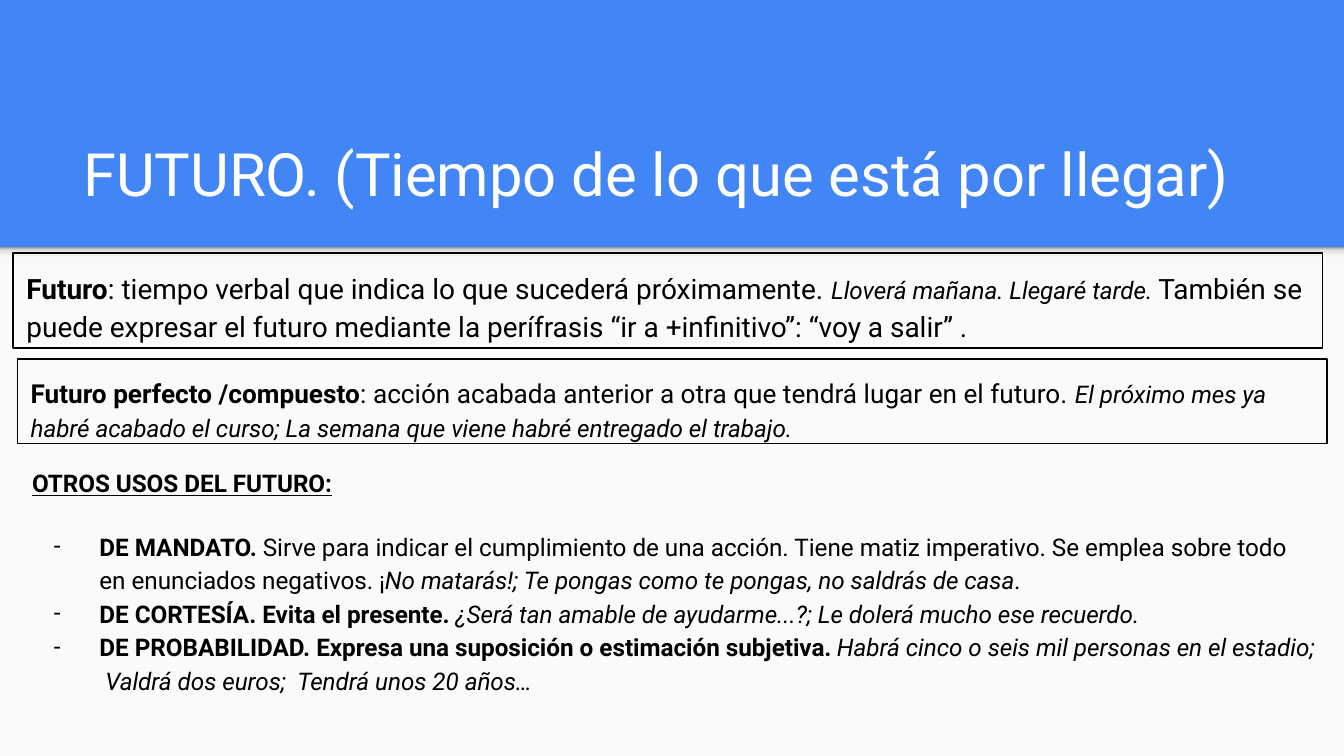
from lxml import etree
from pptx import Presentation
from pptx.dml.color import RGBColor
from pptx.enum.shapes import MSO_SHAPE
from pptx.enum.text import MSO_ANCHOR, MSO_AUTO_SIZE, PP_ALIGN
from pptx.oxml.ns import qn
from pptx.util import Cm, Pt

RECTANGLE = MSO_SHAPE.RECTANGLE
TOP, BOTTOM = MSO_ANCHOR.TOP, MSO_ANCHOR.BOTTOM
LEFT = PP_ALIGN.LEFT
NO_AUTOFIT = MSO_AUTO_SIZE.NONE

FONT = "Roboto"
BLUE, PAPER, BLACK, WHITE = "4285F4", "FAFAFA", "000000", "FFFFFF"
WIDTH, HEIGHT, BAND = 25.4, 14.29, 4.67
INSET = 0.25
SHADOW_STOPS = [(0, "F9F9F9"), (36, "F9F9F9"), (80, "DEDEDE"), (100, "999999")]

TITLE = [("FUTURO. (Tiempo de lo que está por llegar)", 32, "")]
FUTURE = [
    ("Futuro", 15, "b"),
    (": tiempo verbal que indica lo que sucederá próximamente. ", 15, ""),
    ("Lloverá mañana. Llegaré tarde. ", 13, "i"),
    ("También se puede expresar el futuro mediante la perífrasis "
     "“ir a +infinitivo”: “voy a salir” .", 15, ""),
]
PERFECT = [
    ("Futuro perfecto /compuesto", 14, "b"),
    (": acción acabada anterior a otra que tendrá lugar en el futuro. ", 14, ""),
    ("El próximo mes ya habré acabado el curso; "
     "La semana que viene habré entregado el trabajo.", 13, "i"),
]
USES_HEADING = [("OTROS USOS DEL FUTURO:", 13, "bu")]
USES = [
    [("DE MANDATO. ", 13, "b"),
     ("Sirve para indicar el cumplimiento de una acción. Tiene matiz imperativo. "
      "Se emplea sobre todo en enunciados negativos. ¡", 13, ""),
     ("No matarás!; Te pongas como te pongas, no saldrás de casa", 13, "i"),
     (".", 13, "")],
    [("DE CORTESÍA. Evita el presente. ", 13, "b"),
     ("¿Será tan amable de ayudarme...?; Le dolerá mucho ese recuerdo.", 13, "i")],
    [("DE PROBABILIDAD. Expresa una suposición o estimación subjetiva. ", 13, "b"),
     ("Habrá cinco o seis mil personas en el estadio;  Valdrá dos euros;  "
      "Tendrá unos 20 años…", 13, "i")],
]
DEFINITIONS = [
    (FUTURE, (0.25, 4.78, 24.75, 1.8)),
    (PERFECT, (0.33, 6.79, 24.75, 1.6)),
]


def color(value):
    """Turn a hex string into a colour."""
    return RGBColor.from_string(value)


def add_rectangle(slide, box):
    """Add a plain rectangle without shadow or line."""
    shape = slide.shapes.add_shape(RECTANGLE, *map(Cm, box))
    shape.shadow.inherit = False
    shape.line.fill.background()
    return shape


def fill_gradient(shape, stops):
    """Fill a shape with a gradient that runs from bottom to top."""
    shape.fill.gradient()
    shape.fill.gradient_angle = 90
    stop_list = shape._element.spPr.find(qn("a:gradFill")).find(qn("a:gsLst"))
    for stop in list(stop_list):
        stop_list.remove(stop)
    for position, value in stops:
        stop = etree.SubElement(stop_list, qn("a:gs"), pos=str(position * 1000))
        etree.SubElement(stop, qn("a:srgbClr"), val=value)


def prepare_frame(shape, anchor=TOP):
    """Set wrapping, margins and anchor, and return the text frame."""
    frame = shape.text_frame
    frame.word_wrap = True
    frame.auto_size = NO_AUTOFIT
    frame.vertical_anchor = anchor
    frame.margin_left = frame.margin_right = Cm(INSET)
    frame.margin_top = frame.margin_bottom = Cm(INSET)
    return frame


def write(paragraph, runs, value=BLACK, spacing=1.0):
    """Write styled runs into a left-aligned paragraph."""
    paragraph.alignment = LEFT
    paragraph.line_spacing = spacing
    for text, size, style in runs:
        run = paragraph.add_run()
        run.text = text
        font = run.font
        font.name, font.size = FONT, Pt(size)
        font.bold, font.italic, font.underline = (mark in style for mark in "biu")
        font.color.rgb = color(value)


def add_dash(paragraph):
    """Give a paragraph a hanging dash."""
    properties = paragraph._p.get_or_add_pPr()
    properties.set("marL", str(Cm(1.27)))
    properties.set("indent", str(Cm(-0.86)))
    bullet_color = etree.SubElement(properties, qn("a:buClr"))
    etree.SubElement(bullet_color, qn("a:srgbClr"), val=BLACK)
    etree.SubElement(properties, qn("a:buFont"), typeface=FONT)
    etree.SubElement(properties, qn("a:buChar"), char="-")


def main():
    """Build and save the slide."""
    presentation = Presentation()
    presentation.slide_width, presentation.slide_height = Cm(WIDTH), Cm(HEIGHT)
    slide = presentation.slides.add_slide(presentation.slide_layouts[5])
    slide.background.fill.solid()
    slide.background.fill.fore_color.rgb = color(BLUE)

    paper = add_rectangle(slide, (0, BAND, WIDTH, HEIGHT - BAND))
    paper.fill.solid()
    paper.fill.fore_color.rgb = color(PAPER)
    fill_gradient(add_rectangle(slide, (0, BAND, WIDTH, 0.3)), SHADOW_STOPS)

    title = slide.shapes.title
    title.left, title.top, title.width, title.height = map(Cm, (1.32, 2.06, 22.83, 2.13))
    write(prepare_frame(title, BOTTOM).paragraphs[0], TITLE, WHITE)

    for runs, box in DEFINITIONS:
        definition = add_rectangle(slide, box)
        definition.fill.background()
        definition.line.color.rgb = color(BLACK)
        definition.line.width = Pt(0.75)
        write(prepare_frame(definition).paragraphs[0], runs, spacing=1.15)

    uses = slide.shapes.add_textbox(*map(Cm, (0.36, 8.61, 24.75, 4.93)))
    frame = prepare_frame(uses)
    write(frame.paragraphs[0], USES_HEADING)
    for index, runs in enumerate(USES):
        paragraph = frame.add_paragraph()
        add_dash(paragraph)
        write(paragraph, runs, spacing=1.15)
        paragraph.space_before = Pt(0 if index else 16)

    presentation.save("out.pptx")


if __name__ == "__main__":
    main()
